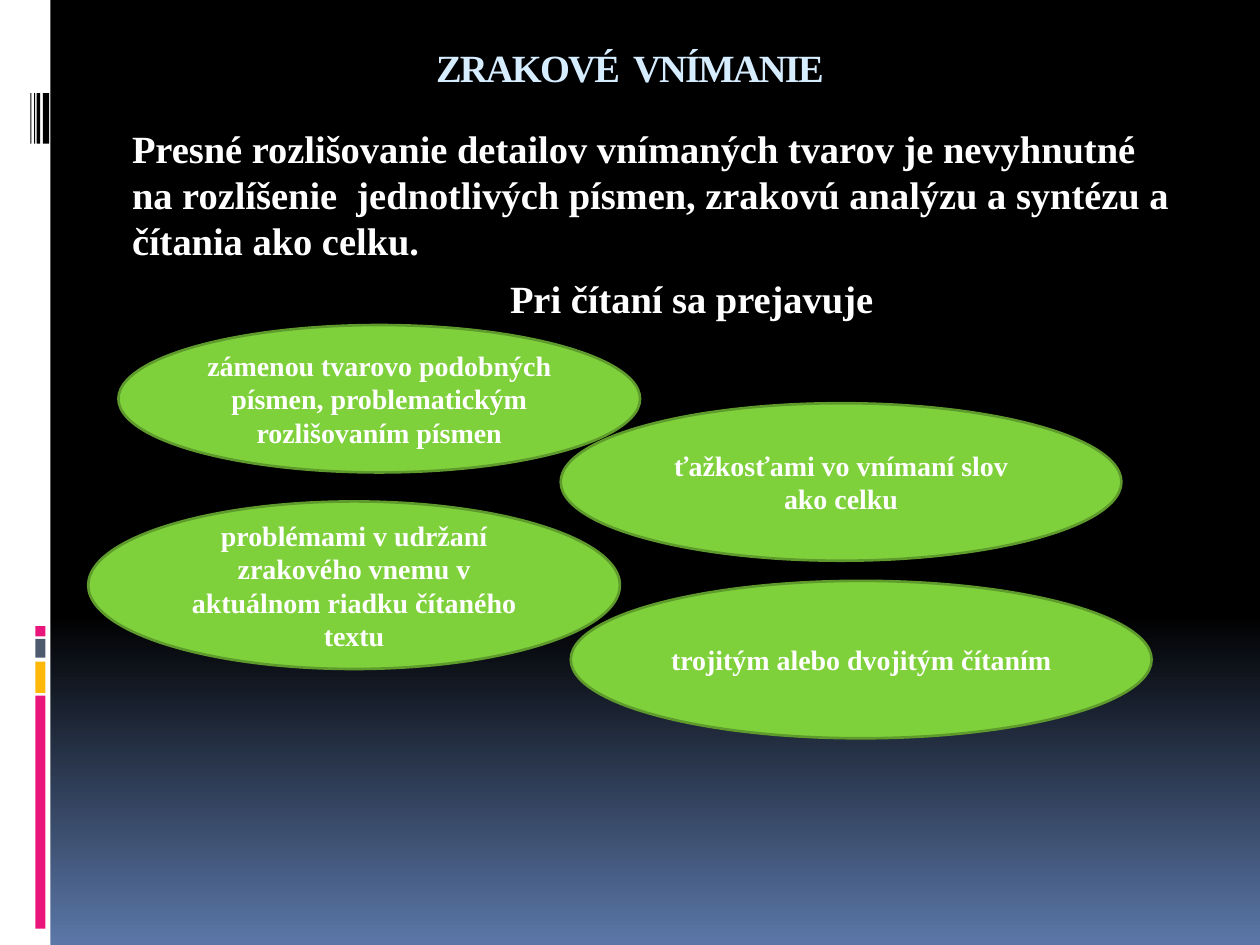
"""Build the slide on visual perception in reading."""
from copy import deepcopy

from pptx import Presentation
from pptx.dml.color import RGBColor
from pptx.enum.shapes import MSO_SHAPE as SHAPE
from pptx.enum.text import MSO_ANCHOR as ANCHOR, PP_ALIGN as ALIGN
from pptx.oxml.ns import qn
from pptx.util import Inches, Pt

FONT = "Times New Roman"
WHITE = RGBColor(0xFF, 0xFF, 0xFF)
BLACK = RGBColor(0, 0, 0)
BLUE = RGBColor(0x5B, 0x77, 0xA8)
PALE = RGBColor(0xD6, 0xEC, 0xFF)
PINK = RGBColor(0xEA, 0x15, 0x7A)
AMBER = RGBColor(0xFE, 0xB8, 0x0A)
SLATE = RGBColor(0x4E, 0x5B, 0x6F)
GREEN = RGBColor(0x7F, 0xD1, 0x3B)
DARK_GREEN = RGBColor(0x5E, 0x9B, 0x2C)

TITLE = "ZRAKOVÉ  VNÍMANIE"
BODY = [
    ("Presné rozlišovanie detailov vnímaných tvarov je nevyhnutné na rozlíšenie  "
     "jednotlivých písmen, zrakovú analýzu a syntézu a čítania ako celku.", 0.45),
    ("Pri čítaní sa prejavuje", 3.45),
]
SYMPTOMS = [
    ("zámenou tvarovo podobných písmen, problematickým rozlišovaním písmen",
     (0.94, 2.58, 4.14, 1.17)),
    ("ťažkosťami vo vnímaní slov ako celku", (4.45, 3.2, 4.45, 1.25)),
    ("problémami v udržaní zrakového vnemu v aktuálnom riadku čítaného textu",
     (0.7, 3.98, 4.22, 1.33)),
    ("trojitým alebo dvojitým čítaním", (4.53, 4.61, 4.61, 1.25)),
]
BLOCKS = [(5.52, 1.85, PINK), (5.25, 0.25, AMBER), (5.07, 0.15, SLATE), (4.97, 0.08, PINK)]
STRIPES = [(0.34, 0.05), (0.29, 0.03), (0.27, 0.01), (0.24, 0.01)]


def add_shape(s, kind, box, fill, line=None):
    sp = s.shapes.add_shape(kind, *map(Inches, box))
    sp.shadow.inherit = False
    sp.fill.solid()
    sp.fill.fore_color.rgb = fill
    if line is None:
        sp.line.fill.background()
    else:
        sp.line.color.rgb = line
        sp.line.width = Pt(1.5)
    return sp


def write(p, text, size=22, color=WHITE, align=ALIGN.LEFT, left=0, before=0, spacing=0):
    p.alignment = align
    p.space_before = Pt(before)
    r = p.add_run()
    r.text = text
    r.font.name, r.font.size, r.font.bold = FONT, Pt(size), True
    r.font.color.rgb = color
    if left:
        p._p.get_or_add_pPr().set("marL", str(Inches(left)))
    if spacing:
        r._r.get_or_add_rPr().set("spc", str(spacing * 100))


def add_text_frame(s, box):
    tf = s.shapes.add_textbox(*map(Inches, box)).text_frame
    tf.word_wrap = True
    return tf


def paint_background(s):
    fill = s.background.fill
    fill.gradient()
    fill.gradient_angle = 270
    start, end = fill.gradient_stops
    start.color.rgb, start.position = BLACK, 0
    end.color.rgb, end.position = BLUE, 1
    first = next(s.element.iter(qn("a:gs")))
    middle = deepcopy(first)
    middle.set("pos", "65000")
    first.addnext(middle)


def main():
    prs = Presentation()
    prs.slide_width, prs.slide_height = Inches(10), Inches(7.5)
    s = prs.slides.add_slide(prs.slide_layouts[6])
    paint_background(s)

    add_shape(s, SHAPE.RECTANGLE, (0, 0, 0.4, 7.5), WHITE)
    for top, height, color in BLOCKS:
        add_shape(s, SHAPE.RECTANGLE, (0.28, top, 0.08, height), color)
    for left, width in STRIPES:
        add_shape(s, SHAPE.RECTANGLE, (left, 0.74, width, 0.4), BLACK)

    tf = add_text_frame(s, (0.5, 0.3, 9, 0.72))
    write(tf.paragraphs[0], TITLE, color=PALE, align=ALIGN.CENTER, spacing=-1)

    tf = add_text_frame(s, (0.5, 0.94, 9, 5.76))
    for i, (text, left) in enumerate(BODY):
        p = tf.add_paragraph() if i else tf.paragraphs[0]
        write(p, text, left=left, before=7)

    for text, box in SYMPTOMS:
        tf = add_shape(s, SHAPE.OVAL, box, GREEN, DARK_GREEN).text_frame
        tf.word_wrap = True
        tf.vertical_anchor = ANCHOR.MIDDLE
        write(tf.paragraphs[0], text, size=16, align=ALIGN.CENTER)

    prs.save("out.pptx")


if __name__ == "__main__":
    main()
